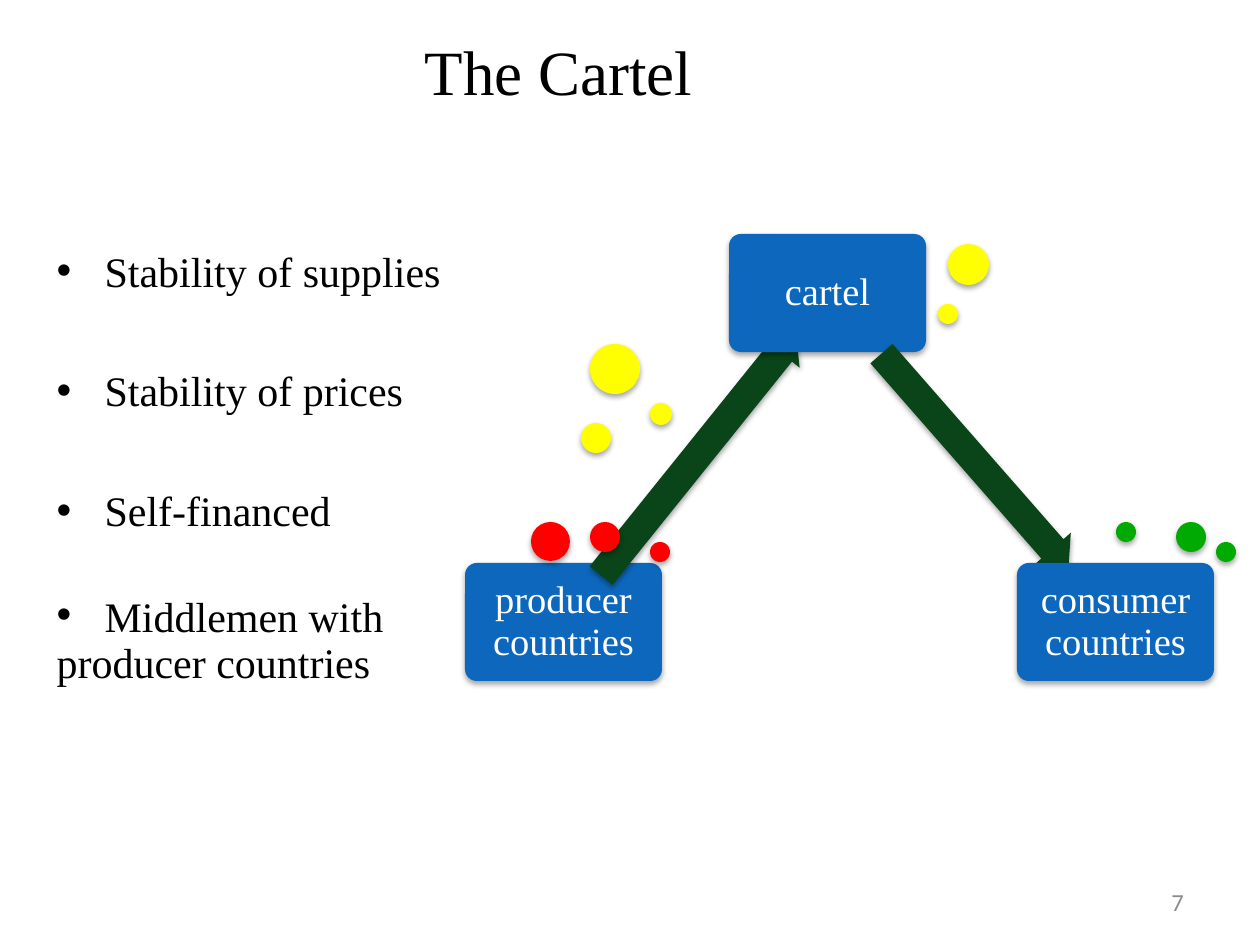
from dataclasses import dataclass

from lxml import etree
from pptx import Presentation
from pptx import util as u
from pptx.dml.color import RGBColor
from pptx.enum import shapes, text
from pptx.oxml import ns

SCALE = 914400 / 126  # EMU per px
SERIF = "Times New Roman"
COLORS = {
    "ink": "000000", "white": "FFFFFF", "gray": "8C8C8C",
    "box": "0D68BD", "arrow": "094518",
    "green": "00AA00", "yellow": "FFFF00", "red": "FF0000",
}
KIND = shapes.MSO_SHAPE


@dataclass
class Box:
    label: str
    left: int
    top: int


@dataclass
class Arrow:
    left: int
    top: int
    width: int
    turn: float


@dataclass
class Dot:
    left: int
    top: int
    size: int
    color: str


@dataclass
class Point:
    words: str
    before: float
    bullet: bool = True
    lines: float = 1.0


PARTS = [
    Box("producer countries", 465, 563),
    Arrow(543, 430, 311, 308.8),
    Box("cartel", 729, 234),
    Arrow(833, 436, 284, 48.8),
    Box("consumer countries", 1017, 563),
]
DOTS = [
    Dot(1116, 522, 20, "green"), Dot(1216, 542, 20, "green"),
    Dot(1176, 522, 30, "green"),
    Dot(581, 423, 30, "yellow"), Dot(948, 244, 41, "yellow"),
    Dot(938, 304, 20, "yellow"), Dot(590, 344, 50, "yellow"),
    Dot(650, 403, 22, "yellow"),
    Dot(590, 522, 30, "red"), Dot(650, 542, 20, "red"),
    Dot(531, 522, 39, "red"),
]
GAP = 39.6
POINTS = [
    Point("Stability of supplies", 0),
    Point("Stability of prices", GAP),
    Point("Self-financed", GAP),
    Point("Middlemen with", GAP, lines=0.7),
    Point("producer countries", 6, bullet=False, lines=0.7),
]


def px(count: float) -> int:
    return round(count * SCALE)


def place(shape, left: int, top: int, width: int, height: int) -> None:
    shape.left, shape.top = px(left), px(top)
    shape.width, shape.height = px(width), px(height)


def style(para, size: int, color: str, name: str = SERIF) -> None:
    para.font.size = u.Pt(size)
    para.font.name = name
    para.font.color.rgb = RGBColor.from_string(COLORS[color])


def shade(shape) -> None:
    """Give the shape a soft shadow straight below it."""
    shape.shadow.inherit = False
    effects = shape._element.spPr.find(ns.qn("a:effectLst"))
    outer = etree.SubElement(
        effects, ns.qn("a:outerShdw"), blurRad="40000", dist="23000",
        dir="5400000", rotWithShape="0")
    color = etree.SubElement(outer, ns.qn("a:srgbClr"), val=COLORS["ink"])
    etree.SubElement(color, ns.qn("a:alpha"), val="35000")


def solid(slide, kind, left: int, top: int, width: int, height: int,
          color: str):
    """Add a filled shape with a shadow and no outline."""
    shape = slide.shapes.add_shape(
        kind, px(left), px(top), px(width), px(height))
    shape.fill.solid()
    shape.fill.fore_color.rgb = RGBColor.from_string(COLORS[color])
    shape.line.fill.background()
    shade(shape)
    return shape


def draw_box(slide, box: Box) -> None:
    shape = solid(slide, KIND.ROUNDED_RECTANGLE, box.left, box.top,
                  197, 118, "box")
    shape.adjustments[0] = 0.1
    frame = shape.text_frame
    frame.word_wrap = True
    frame.vertical_anchor = text.MSO_ANCHOR.MIDDLE
    frame.margin_left = frame.margin_right = px(15)
    frame.margin_top = frame.margin_bottom = px(15)
    para = frame.paragraphs[0]
    para.text = box.label
    para.alignment = text.PP_ALIGN.CENTER
    para.line_spacing = 0.9
    style(para, 22, "white")


def draw_arrow(slide, arrow: Arrow) -> None:
    shape = solid(slide, KIND.RIGHT_ARROW, arrow.left, arrow.top,
                  arrow.width, 49, "arrow")
    shape.adjustments[0] = 0.6
    shape.adjustments[1] = 0.5
    shape.rotation = arrow.turn


def draw_dot(slide, dot: Dot) -> None:
    solid(slide, KIND.FLOWCHART_CONNECTOR, dot.left, dot.top,
          dot.size, dot.size, dot.color)


def fill_title(title) -> None:
    place(title, 412, 37, 784, 149)
    frame = title.text_frame
    frame.auto_size = text.MSO_AUTO_SIZE.NONE
    frame.vertical_anchor = text.MSO_ANCHOR.TOP
    para = frame.paragraphs[0]
    para.text = "The Cartel"
    para.alignment = text.PP_ALIGN.LEFT
    para.line_spacing = u.Pt(37)
    style(para, 36, "ink")


def fill_body(body) -> None:
    place(body, 44, 234, 1134, 624)
    frame = body.text_frame
    frame.auto_size = text.MSO_AUTO_SIZE.NONE
    frame.margin_top = px(11)
    for i, point in enumerate(POINTS):
        para = frame.add_paragraph() if i else frame.paragraphs[0]
        para.text = point.words
        props = para._p.get_or_add_pPr()
        indent = px(48) if point.bullet else 0
        props.set("marL", str(indent))
        props.set("indent", str(-indent))
        if point.bullet:
            etree.SubElement(props, ns.qn("a:buChar"), char="•")
        else:
            etree.SubElement(props, ns.qn("a:buNone"))
        para.line_spacing = point.lines
        para.space_before = u.Pt(point.before)
        style(para, 24, "ink")


def add_number(slide) -> None:
    label = slide.shapes.add_textbox(px(1159), px(877), px(79), px(50))
    frame = label.text_frame
    frame.word_wrap = True
    frame.vertical_anchor = text.MSO_ANCHOR.MIDDLE
    para = frame.paragraphs[0]
    para.text = "7"
    style(para, 14, "gray", "Calibri")


def main() -> None:
    deck = Presentation()
    deck.slide_width, deck.slide_height = px(1260), px(945)
    slide = deck.slides.add_slide(deck.slide_layouts[1])
    fill_title(slide.shapes.title)
    fill_body(slide.placeholders[1])
    add_number(slide)
    for part in PARTS:
        draw = draw_box if isinstance(part, Box) else draw_arrow
        draw(slide, part)
    for dot in DOTS:
        draw_dot(slide, dot)
    deck.save("out.pptx")


if __name__ == "__main__":
    main()
